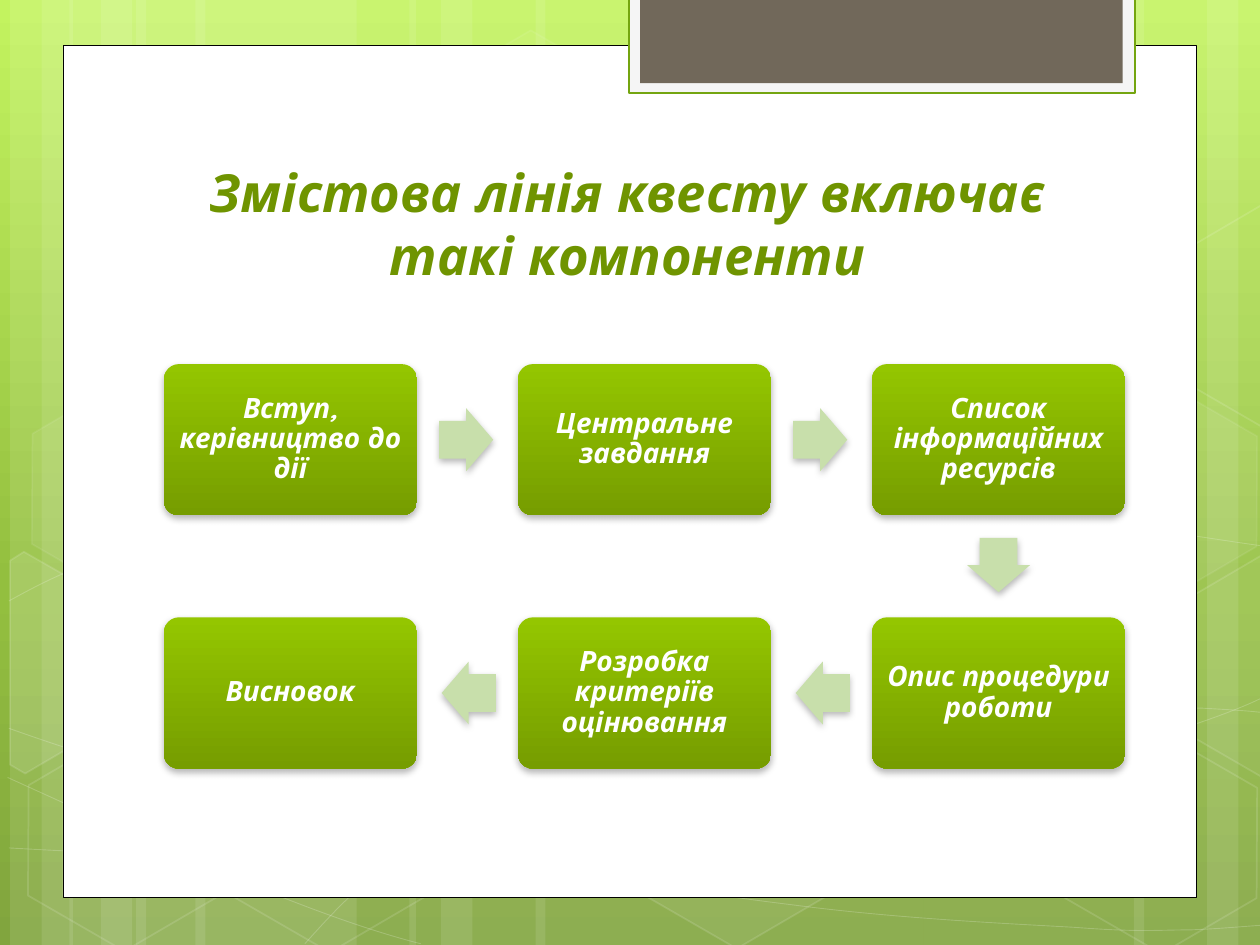
from copy import deepcopy

from lxml import etree
from pptx import Presentation
from pptx.dml.color import RGBColor
from pptx.enum import shapes, text
from pptx.oxml.ns import qn
from pptx.util import Inches, Pt

KIND = shapes.MSO_SHAPE
FONT = "Quicksand"
COLORS = {
    "white": "FFFFFF", "black": "000000", "title": "6F9400",
    "tab_edge": "74A510", "tab_rim": "F5F5F5", "tab": "71685A",
    "arrow": "C8DFAB", "step_top": "94C600", "step_bottom": "769D00",
    "sky": "C3F35F", "grass": "93BF3F", "moss": "81A53E",
}

# Content
TITLE = "Змістова лінія квесту включає такі\u00a0компоненти"
STEPS = [
    "Вступ, керівництво до дії", "Центральне завдання", "Список інформаційних ресурсів",
    "Опис процедури роботи", "Розробка критеріїв оцінювання", "Висновок",
]

# Backdrop: (left, width) of bars; (left, top, fill %, line %) of hexagons
BARS = [
    (1.08, 1.75), (0.08, 0.5), (0.33, 0.83), (1.55, 1.75), (0.55, 0.5), (0.8, 0.83),
    (7.33, 1.75), (9.58, 0.5), (9, 0.83), (4.25, 3.08), (3.25, 0.5), (3.5, 0.83),
]
HEXAGONS = [
    (3.34, 0.36, 4, 8), (4.97, 5.89, 6, 12), (0.11, 5.91, 0, 12),
    (0.14, 3.12, 7, 8), (1.74, 5.92, 0, 12), (7.53, 4.53, 10, 12),
    (8.34, 5.93, 0, 12), (8.34, 3.14, 7, 8),
]
CUT_HEXAGONS = [
    (10, [(0.08, 4.45), (0.19, 4.38), (0.96, 4.82), (0.95, 5.7), (0.2, 6.14), (0.08, 6.07)]),
    (4, [(9.26, 4.85), (10.01, 4.41), (10.09, 4.46), (10.09, 6.13), (10.02, 6.17), (9.26, 5.73)]),
    (0, [(9.26, 2.07), (10.01, 1.63), (10.1, 1.68), (10.09, 3.35), (10.02, 3.39), (9.26, 2.95)]),
]
# Bezier chains: a start point, then two control points and an end point per piece
CURVES = [
    [(0.07, 6.73), (0.61, 6.76), (1.15, 6.79), (1.9, 6.78), (2.65, 6.77), (3.58, 6.75),
     (4.58, 6.65), (5.58, 6.55), (7, 6.36), (7.92, 6.17), (8.83, 5.98), (9.77, 5.68),
     (10.07, 5.51)],
    [(0.07, 4.77), (0.36, 4.61), (0.65, 4.46), (1.21, 4.31), (1.78, 4.16), (2.59, 3.94),
     (3.47, 3.87), (4.36, 3.8), (5.44, 3.79), (6.54, 3.87), (7.64, 3.95), (9.47, 4.26),
     (10.07, 4.34)],
    [(0.06, 6.17), (1.27, 6.72), (2.47, 7.27), (3.34, 7.49)],
    [(0.07, 5.78), (0.38, 5.89), (0.7, 6), (1.28, 6.16), (1.86, 6.31), (2.73, 6.56),
     (3.57, 6.73), (4.4, 6.9), (5.45, 7.08), (6.28, 7.18), (7.11, 7.29), (8, 7.33),
     (8.53, 7.36), (9.05, 7.4), (9.19, 7.38), (9.45, 7.38), (9.71, 7.37), (9.89, 7.35),
     (10.07, 7.34)],
    [(2.42, 7.49), (2.6, 7.29), (2.78, 7.09), (3.02, 6.91), (3.26, 6.73), (3.6, 6.53),
     (3.88, 6.39), (4.16, 6.25), (4.33, 6.19), (4.7, 6.09), (5.06, 5.99), (5.73, 5.85),
     (6.08, 5.78), (6.44, 5.71), (6.49, 5.71), (6.8, 5.69), (7.11, 5.66), (7.6, 5.63),
     (7.94, 5.62), (8.29, 5.61), (8.86, 5.62), (8.86, 5.62), (9.08, 5.62), (9.31, 5.62),
     (9.53, 5.62), (9.71, 5.63), (9.88, 5.64), (9.97, 5.65), (10.06, 5.66), (10.03, 5.65),
     (10.06, 5.66)],
]


def color(name):
    return RGBColor.from_string(COLORS[name])


def set_alpha(parent, percent):
    tint = parent.find(".//" + qn("a:srgbClr"))
    etree.SubElement(tint, qn("a:alpha")).set("val", str(percent * 1000))


def paint(shape, fill=None, line=None, width=1, fill_alpha=100, line_alpha=100):
    shape.shadow.inherit = False
    if fill and fill_alpha:
        shape.fill.solid()
        shape.fill.fore_color.rgb = color(fill)
        if fill_alpha < 100:
            set_alpha(shape._element.spPr, fill_alpha)
    else:
        shape.fill.background()
    if line:
        shape.line.color.rgb = color(line)
        shape.line.width = Pt(width)
        if line_alpha < 100:
            set_alpha(shape._element.spPr.find(qn("a:ln")), line_alpha)
    else:
        shape.line.fill.background()


def paint_gradient(fill, stops):
    fill.gradient()
    first = fill.gradient_stops[0]._gs
    for _ in stops[2:]:
        first.addnext(deepcopy(first))
    for stop, (position, name) in zip(fill.gradient_stops, stops):
        stop.color.rgb = color(name)
        stop.position = position
    fill.gradient_angle = 270


def add_shadow(shape):
    effects = shape._element.spPr.find(qn("a:effectLst"))
    shadow = etree.SubElement(effects, qn("a:outerShdw"), blurRad=str(Pt(4)),
                              dist=str(Pt(2)), dir="5400000", rotWithShape="0")
    etree.SubElement(shadow, qn("a:srgbClr"), val=COLORS["black"])
    set_alpha(shadow, 28)


def add_shape(page, kind, left, top, width, height):
    return page.shapes.add_shape(kind, *map(Inches, (left, top, width, height)))


def add_outline(page, points, close):
    start, *rest = [(Inches(x), Inches(y)) for x, y in points]
    builder = page.shapes.build_freeform(*start)
    builder.add_line_segments(rest, close=close)
    return builder.convert_to_shape()


def add_curve(page, knots):
    curve = add_outline(page, knots, False)
    # Join every three straight segments into one Bezier piece
    route = curve._element.spPr.find(".//" + qn("a:path"))
    segments = route.findall(qn("a:lnTo"))
    for i in range(0, len(segments), 3):
        piece = etree.SubElement(route, qn("a:cubicBezTo"))
        for segment in segments[i:i + 3]:
            piece.append(segment[0])
            route.remove(segment)
    return curve


def write(box, words, size, name, anchor, inset_x, inset_y):
    frame = box.text_frame
    frame.text = words
    frame.word_wrap = True
    frame.vertical_anchor = anchor
    frame.margin_left = frame.margin_right = Inches(inset_x)
    frame.margin_top = frame.margin_bottom = Inches(inset_y)
    para = frame.paragraphs[0]
    para.alignment = text.PP_ALIGN.CENTER
    font = para.runs[0].font
    font.name, font.size, font.bold, font.italic = FONT, Pt(size), True, True
    font.color.rgb = color(name)
    return para


def add_backdrop(page):
    paint_gradient(page.background.fill, [(0, "sky"), (0.62, "grass"), (1, "moss")])
    for left, width in BARS:
        paint(add_shape(page, KIND.RECTANGLE, left, 0, width, 7.5), "white", fill_alpha=10)
    for knots in CURVES:
        paint(add_curve(page, knots), None, "white", 0.5, line_alpha=20)
    for left, top, fill_alpha, line_alpha in HEXAGONS:
        hexagon = add_shape(page, KIND.HEXAGON, left, top, 1.75, 1.52)
        hexagon.adjustments[0], hexagon.adjustments[1] = 0.285, 1.155
        hexagon.rotation = 30
        paint(hexagon, "white", "white", 1, fill_alpha, line_alpha)
    for fill_alpha, corners in CUT_HEXAGONS:
        paint(add_outline(page, corners, True), "white", "white", 1, fill_alpha, 12)
    # White sheet and top tab
    paint(add_shape(page, KIND.RECTANGLE, 0.5, 0.36, 9, 6.76), "white", "black", 0.5)
    paint(add_shape(page, KIND.RECTANGLE, 4.99, -0.02, 4.02, 0.76), "tab_rim", "tab_edge", 1.25)
    paint(add_shape(page, KIND.RECTANGLE, 5.08, -0.02, 3.83, 0.68), "tab")


def add_process(page):
    columns, left, top = 3, 1.3, 2.89
    width, height, across, down = 2.01, 1.2, 2.81, 2.01
    arrow_width, arrow_height, nudge = 0.43, 0.5, 0.01
    # Steps snake: first row to the right, second row back to the left
    places = []
    for i in range(len(STEPS)):
        row, column = divmod(i, columns)
        column = columns - 1 - column if row % 2 else column
        places.append((left + column * across, top + row * down))
    for i, (words, (x, y)) in enumerate(zip(STEPS, places)):
        step = add_shape(page, KIND.ROUNDED_RECTANGLE, x, y, width, height)
        step.adjustments[0] = 0.1
        paint(step)
        paint_gradient(step.fill, [(0, "step_top"), (1, "step_bottom")])
        add_shadow(step)
        para = write(step, words, 16, "white", text.MSO_ANCHOR.MIDDLE, 0.07, 0.07)
        para.line_spacing = 0.9
        if i + 1 == len(STEPS):
            continue
        # Arrow midway to the next step, drawn slightly nearer to this one
        next_x, next_y = places[i + 1]
        turn = 90 if next_y > y else 0 if next_x > x else 180
        middle_x = (x + next_x + width) / 2 - nudge * ((next_x > x) - (next_x < x))
        middle_y = (y + next_y + height) / 2 - nudge * (next_y > y)
        arrow = add_shape(page, KIND.RIGHT_ARROW, middle_x - arrow_width / 2,
                          middle_y - arrow_height / 2, arrow_width, arrow_height)
        arrow.adjustments[0], arrow.adjustments[1] = 0.6, 0.5
        arrow.rotation = turn
        paint(arrow, "arrow")
        add_shadow(arrow)


def main():
    deck = Presentation()
    deck.slide_width, deck.slide_height = Inches(10), Inches(7.5)
    page = deck.slides.add_slide(deck.slide_layouts[6])
    add_backdrop(page)
    title = page.shapes.add_textbox(*map(Inches, (1.14, 1.07, 7.68, 1.25)))
    write(title, TITLE, 30, "title", text.MSO_ANCHOR.BOTTOM, 0.1, 0.05)
    add_process(page)
    deck.save("out.pptx")


if __name__ == "__main__":
    main()
